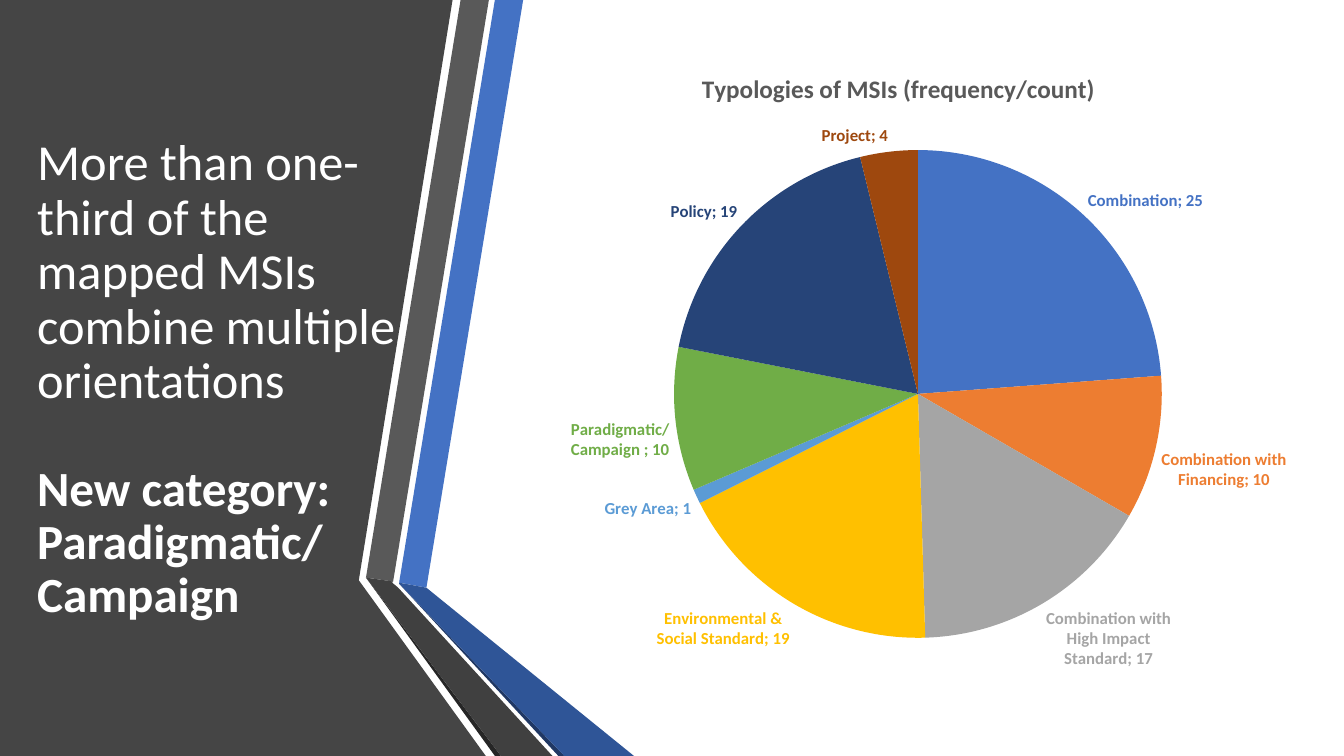
from lxml import etree
from pptx import Presentation
from pptx.chart.data import CategoryChartData
from pptx.dml.color import RGBColor
from pptx.enum.chart import XL_CHART_TYPE, XL_LABEL_POSITION
from pptx.enum.text import MSO_ANCHOR, PP_ALIGN
from pptx.oxml.ns import qn
from pptx.util import Pt

PIE = XL_CHART_TYPE.PIE
OUTSIDE_END = XL_LABEL_POSITION.OUTSIDE_END
MIDDLE = MSO_ANCHOR.MIDDLE
LEFT = PP_ALIGN.LEFT
FONT = "Calibri"

WHITE = RGBColor(0xFF, 0xFF, 0xFF)
BLACK = RGBColor(0x00, 0x00, 0x00)
CHARCOAL = RGBColor(0x45, 0x45, 0x45)
GREY = RGBColor(0x59, 0x59, 0x59)
GREY_FOLD = RGBColor(0x40, 0x40, 0x40)
GREY_SHADE = RGBColor(0x26, 0x26, 0x26)
BLUE = RGBColor(0x44, 0x72, 0xC4)
BLUE_FOLD = RGBColor(0x2F, 0x55, 0x97)
BLUE_SHADE = RGBColor(0x20, 0x38, 0x64)
ORANGE = RGBColor(0xED, 0x7D, 0x31)
SILVER = RGBColor(0xA5, 0xA5, 0xA5)
GOLD = RGBColor(0xFF, 0xC0, 0x00)
SKY = RGBColor(0x5B, 0x9B, 0xD5)
GREEN = RGBColor(0x70, 0xAD, 0x47)
NAVY = RGBColor(0x26, 0x44, 0x78)
RUST = RGBColor(0x9E, 0x48, 0x0E)

BACKDROP = [
    (CHARCOAL, [(0, 0), (323.3, 0), (256.3, 414.5), (347, 540), (0, 540)]),
    (BLUE, [(285.1, 416.2), (304.6, 419.8), (373.7, 0), (353.5, 0)]),
    (GREY, [(349.2, 0), (329, 0), (261.4, 412.6), (280.8, 415.4)]),
    (GREY_SHADE, [(261.4, 412.6), (353.5, 540), (357.8, 540)]),
    (BLUE_SHADE, [(285.1, 416.9), (398.9, 540), (403.2, 540)]),
    (BLUE_FOLD, [(285.1, 416.9), (403.2, 540), (452.9, 540),
                 (304.6, 419.8), (285.1, 416.2)]),
    (GREY_FOLD, [(394.6, 540), (284.4, 419.8), (280.1, 416.2),
                 (280.8, 415.4), (261.4, 412.6), (357.8, 540)]),
]

MESSAGE = [
    ("More than one-third of the mapped MSIs combine multiple orientations",
     {"size": Pt(36), "bold": False}, 0),
    ("New category: Paradigmatic/\vCampaign", {"size": Pt(35.1), "bold": True}, 39),
]

TYPOLOGIES = [
    ("Combination", 25, BLUE),
    ("Combination with Financing", 10, ORANGE),
    ("Combination with High Impact Standard", 17, SILVER),
    ("Environmental & Social Standard", 19, GOLD),
    ("Grey Area", 1, SKY),
    ("Paradigmatic/ Campaign ", 10, GREEN),
    ("Policy", 19, NAVY),
    ("Project", 4, RUST),
]


def format_font(font, color, **values):
    """Apply the slide typeface, a colour and further values to a font."""
    for attribute, value in {"name": FONT, **values}.items():
        setattr(font, attribute, value)
    font.color.rgb = color


def set_layout(parent, index, **fractions):
    """Fix a chart part at fractions of the chart area."""
    for old in parent.findall(qn("c:layout")):
        parent.remove(old)
    layout = etree.Element(qn("c:layout"))
    manual = etree.SubElement(layout, qn("c:manualLayout"))
    if "w" in fractions:
        etree.SubElement(manual, qn("c:layoutTarget")).set("val", "inner")
    for axis in "xy":
        etree.SubElement(manual, qn(f"c:{axis}Mode")).set("val", "edge")
    for key, fraction in fractions.items():
        etree.SubElement(manual, qn(f"c:{key}")).set("val", str(fraction))
    parent.insert(index, layout)


def draw_backdrop(slide, left, top):
    """Draw the dark panel and the two folded ribbons beside it."""
    for color, outline in BACKDROP:
        corners = [(Pt(left + x), Pt(top + y)) for x, y in outline]
        builder = slide.shapes.build_freeform(*corners[0], scale=1.0)
        builder.add_line_segments(corners[1:], close=True)
        facet = builder.convert_to_shape()
        facet.shadow.inherit = False
        facet.fill.solid()
        facet.fill.fore_color.rgb = color
        facet.line.fill.background()


def write_message(slide, left, top, width, height):
    """Write the statement and the new category on the dark panel."""
    message = slide.shapes.add_textbox(Pt(left), Pt(top), Pt(width), Pt(height))
    frame = message.text_frame
    frame.word_wrap = True
    frame.vertical_anchor = MIDDLE
    for number, (wording, values, gap) in enumerate(MESSAGE):
        paragraph = frame.add_paragraph() if number else frame.paragraphs[0]
        paragraph.text = wording
        layout = {"alignment": LEFT, "line_spacing": 0.9, "space_before": Pt(gap)}
        for attribute, value in layout.items():
            setattr(paragraph, attribute, value)
        for run in paragraph.runs:
            format_font(run.font, WHITE, **values)


def draw_typologies(slide, left, top, width, height):
    """Draw the pie of typologies with labels in the slice colours."""
    data = CategoryChartData()
    data.categories = [name for name, _, _ in TYPOLOGIES]
    data.add_series("Series 1", [count for _, count, _ in TYPOLOGIES])
    chart = slide.shapes.add_chart(
        PIE, Pt(left), Pt(top), Pt(width), Pt(height), data).chart
    format_font(chart.font, BLACK, size=Pt(10))
    chart.has_legend = False

    heading = chart.chart_title
    heading.text_frame.text = "Typologies of MSIs (frequency/count)"
    format_font(heading.text_frame.paragraphs[0].runs[0].font, GREY,
                size=Pt(18), bold=True)
    heading.include_in_layout = False

    root = chart.element if hasattr(chart, "element") else chart._chartSpace
    set_layout(root.find(".//" + qn("c:title")), 1, x=0.2, y=0.05)
    set_layout(root.find(".//" + qn("c:plotArea")), 0, x=0.17, y=0.17, w=0.63, h=0.7)

    pie = chart.plots[0]
    pie.vary_by_categories = True
    for number, (_, _, color) in enumerate(TYPOLOGIES):
        point = pie.series[0].points[number]
        point.format.fill.solid()
        point.format.fill.fore_color.rgb = color
        point.format.line.fill.background()
        format_font(point.data_label.font, color, size=Pt(12), bold=True)
        point.data_label.position = OUTSIDE_END
    for label in root.iter(qn("c:dLbl")):
        label.find(qn("c:showCatName")).set("val", "1")
        etree.SubElement(label, qn("c:separator")).text = "; "


def main():
    """Build the slide and save it."""
    deck = Presentation()
    deck.slide_width, deck.slide_height = Pt(960), Pt(540)
    slide = deck.slides.add_slide(deck.slide_layouts[6])
    draw_backdrop(slide, 0, 0)
    write_message(slide, 19.5, 54, 283, 435.5)
    draw_typologies(slide, 387.5, 22.5, 553, 498)
    deck.save("out.pptx")


if __name__ == "__main__":
    main()
